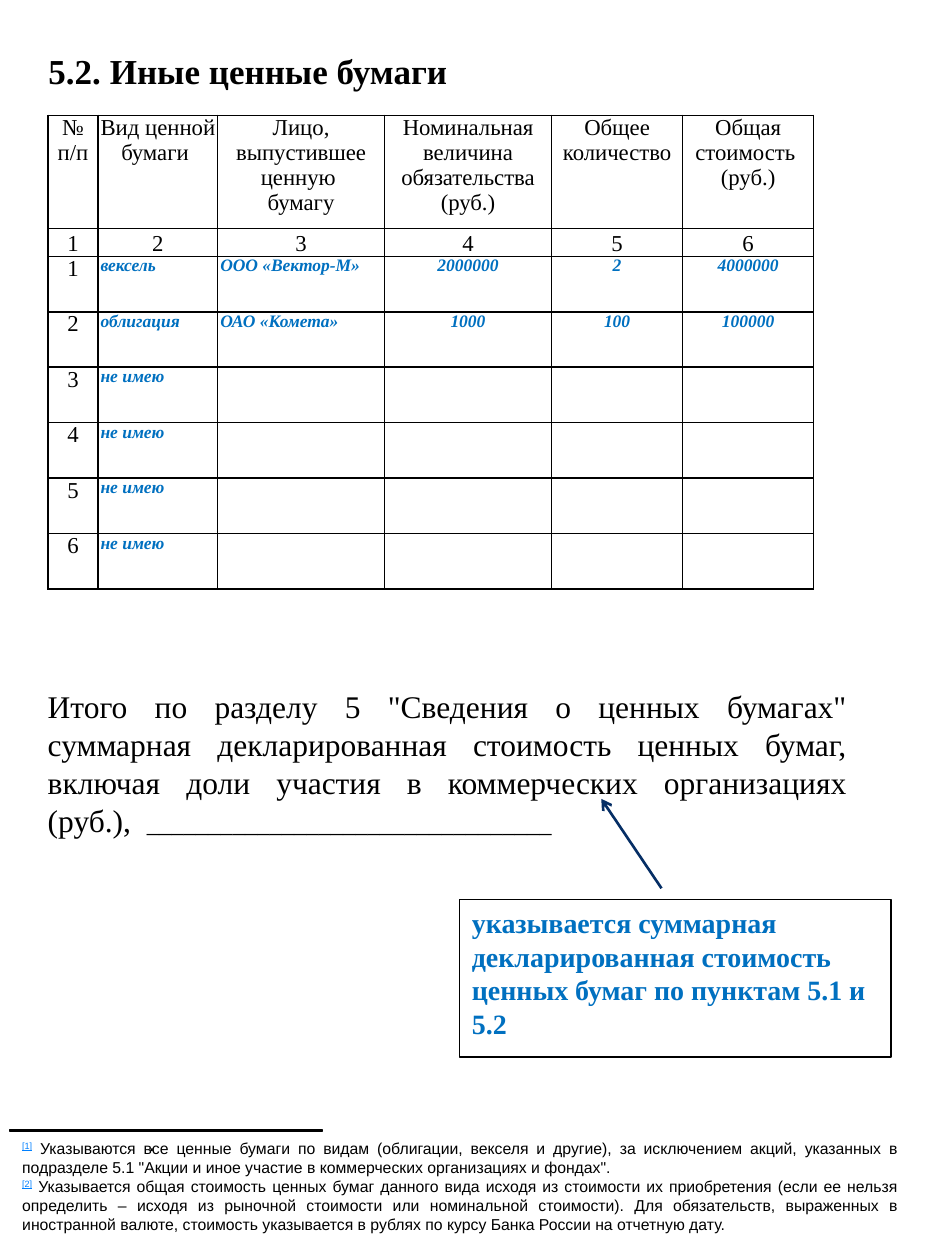
import pptx
import pptx.util
import pptx.dml.color
import pptx.enum.shapes
import pptx.enum.text
import pptx.oxml
import pptx.oxml.ns
from lxml import etree

Pt = pptx.util.Pt
RGBColor = pptx.dml.color.RGBColor
Align = pptx.enum.text.PP_ALIGN
Anchor = pptx.enum.text.MSO_ANCHOR

BLACK = RGBColor(0x00, 0x00, 0x00)
WHITE = RGBColor(0xFF, 0xFF, 0xFF)
BLUE = RGBColor(0x00, 0x70, 0xC0)
LINK = RGBColor(0x00, 0x80, 0xFF)
NAVY = RGBColor(0x05, 0x2E, 0x65)

SERIF, SANS = "Times New Roman", "Arial"
TITLE = {"name": SERIF, "size": Pt(20), "bold": True}
TABLE = {"name": SERIF, "size": Pt(13)}
SAMPLE = {"name": SERIF, "size": Pt(10), "bold": True, "italic": True, "color": BLUE}
TOTAL = {"name": SERIF, "size": Pt(18)}
BLANK_LINE = {**TOTAL, "size": Pt(14)}
HINT = {"name": SERIF, "size": Pt(16), "bold": True, "color": BLUE}
NOTE = {"name": SANS, "size": Pt(9)}
NOTE_MARK = {**NOTE, "color": LINK, "underline": True}
DOT = {"name": SANS, "size": Pt(14)}


class Sheet:
    """Holds the current slide and draws each kind of element on it."""

    def __init__(self, slide):
        self.slide = slide

    def style(self, font, look):
        font.color.rgb = look.get("color", BLACK)
        for key, value in look.items():
            if key != "color":
                setattr(font, key, value)

    def fill_text(self, frame, paragraphs, align=Align.LEFT):
        """Each paragraph is a list of (text, look) runs."""
        for number, pieces in enumerate(paragraphs):
            paragraph = frame.add_paragraph() if number else frame.paragraphs[0]
            paragraph.alignment = align
            for wording, look in pieces:
                run = paragraph.add_run()
                run.text = wording
                self.style(run.font, look)
                if look is NOTE_MARK:
                    run._r.get_or_add_rPr().set("baseline", "30000")

    def text(self, box, paragraphs, align=Align.LEFT, anchor=Anchor.TOP, **insets):
        frame = self.slide.shapes.add_textbox(*map(Pt, box)).text_frame
        frame.word_wrap = True
        frame.vertical_anchor = anchor
        for side, inset in insets.items():
            setattr(frame, "margin_" + side, Pt(inset))
        self.fill_text(frame, paragraphs, align)

    def rectangle(self, box, fill, paragraphs=()):
        shape = self.slide.shapes.add_shape(
            pptx.enum.shapes.MSO_SHAPE.RECTANGLE, *map(Pt, box))
        shape.shadow.inherit = False
        shape.fill.solid()
        shape.fill.fore_color.rgb = fill
        shape.line.color.rgb = BLACK
        shape.line.width = Pt(0.75)
        shape.text_frame.vertical_anchor = Anchor.TOP
        self.fill_text(shape.text_frame, paragraphs)

    def arrow(self, start, end):
        line = self.slide.shapes.add_connector(
            pptx.enum.shapes.MSO_CONNECTOR.STRAIGHT, *map(Pt, start + end))
        line.line.color.rgb = NAVY
        line.line.width = Pt(1.5)
        qn = pptx.oxml.ns.qn
        etree.SubElement(line.line._get_or_add_ln(), qn("a:tailEnd"), type="arrow")
        etree.SubElement(line._element.spPr, qn("a:effectLst"))

    def border(self, cell):
        for side in "LRTB":
            cell._tc.get_or_add_tcPr().append(pptx.oxml.parse_xml(
                f'<a:ln{side} {pptx.oxml.ns.nsdecls("a")} w="12700"><a:solidFill>'
                f'<a:srgbClr val="{BLACK}"/></a:solidFill></a:ln{side}>'))

    def table(self, corner, widths, heights, rows):
        """Rows hold (text, look, align, anchor) cells."""
        table = self.slide.shapes.add_table(
            len(heights), len(widths),
            *map(Pt, (*corner, sum(widths), sum(heights)))).table
        table.first_row = table.horz_banding = False
        for column, width in zip(table.columns, widths):
            column.width = Pt(width)
        for row, height, entries in zip(table.rows, heights, rows):
            row.height = Pt(height)
            for cell, (wording, look, align, anchor) in zip(row.cells, entries):
                self.border(cell)
                cell.fill.background()
                cell.margin_left = cell.margin_right = Pt(1.5)
                cell.margin_top = cell.margin_bottom = 0
                cell.vertical_anchor = anchor
                if wording:
                    lines = [[(line, look)] for line in wording.split("\n")]
                    self.fill_text(cell.text_frame, lines, align)


def security_rows():
    headings = ["№\nп/п", "Вид ценной бумаги ", "Лицо, выпустившее ценную \nбумагу",
                "Номинальная величина обязательства\n(руб.)",
                "Общее количество", "Общая стоимость \n(руб.)"]
    securities = [
        ["вексель", "ООО «Вектор-М»", "2000000", "2", "4000000"],
        ["облигация", "ОАО «Комета»", "1000", "100", "100000"],
    ] + [["не имею", "", "", "", ""]] * 4
    yield [(heading, TABLE, Align.CENTER, Anchor.TOP) for heading in headings]
    yield [(str(n), TABLE, Align.CENTER, Anchor.BOTTOM) for n in range(1, 7)]
    for number, values in enumerate(securities, 1):
        yield [(str(number), TABLE, Align.CENTER, Anchor.TOP)] + [
            (value, SAMPLE, Align.LEFT if column < 2 else Align.CENTER, Anchor.TOP)
            for column, value in enumerate(values)]


def main():
    deck = pptx.Presentation()
    deck.slide_width, deck.slide_height = Pt(540), Pt(720)
    sheet = Sheet(deck.slides.add_slide(deck.slide_layouts[6]))

    # Table of securities
    sheet.table((27.4, 66), [28.6, 68.4, 95.3, 95.5, 74.9, 74.9],
                [64.5, 16] + [31.7] * 6, security_rows())

    # Hint about the total
    sheet.rectangle((262.6, 514, 246.6, 90), WHITE, [[(
        "указывается суммарная декларированная стоимость ценных бумаг "
        "по пунктам 5.1 и 5.2", HINT)]])

    # Heading
    sheet.text((20.6, 23, 420, 82), [[("5.2. Иные ценные бумаги", TITLE)]], top=5.4)

    # Footnotes under a short rule
    sheet.text((5.6, 595.4, 270, 106.6), [[(".", DOT)]], left=79.2, top=48.6)
    sheet.rectangle((5.6, 645.8, 178.6, 0.5), BLACK)
    sheet.text((5.6, 646.6, 514, 62), [
        [("[1]", NOTE_MARK),
         (" Указываются все ценные бумаги по видам (облигации, векселя и другие), "
          "за исключением акций, указанных в подразделе 5.1 \"Акции и иное участие "
          "в коммерческих организациях и фондах\".", NOTE)],
        [("[2]", NOTE_MARK),
         (" Указывается общая стоимость ценных бумаг данного вида исходя из стоимости "
          "их приобретения (если ее нельзя определить – исходя из рыночной стоимости "
          "или номинальной стоимости). Для обязательств, выраженных в иностранной "
          "валюте, стоимость указывается в рублях по курсу Банка России на отчетную "
          "дату.", NOTE)],
    ], Align.JUSTIFY, Anchor.MIDDLE)

    # Section total with the hint's arrow
    sheet.text((20.2, 384.5, 470.9, 99.4), [[
        ("Итого по разделу 5 \"Сведения о ценных бумагах\" суммарная декларированная "
         "стоимость ценных бумаг, включая доли участия в коммерческих организациях "
         "(руб.),  ", TOTAL),
        ("_" * 33, BLANK_LINE)]], Align.JUSTIFY, top=8.2)
    sheet.arrow((378, 507.6), (343.6, 456.5))

    deck.save("out.pptx")


if __name__ == "__main__":
    main()
